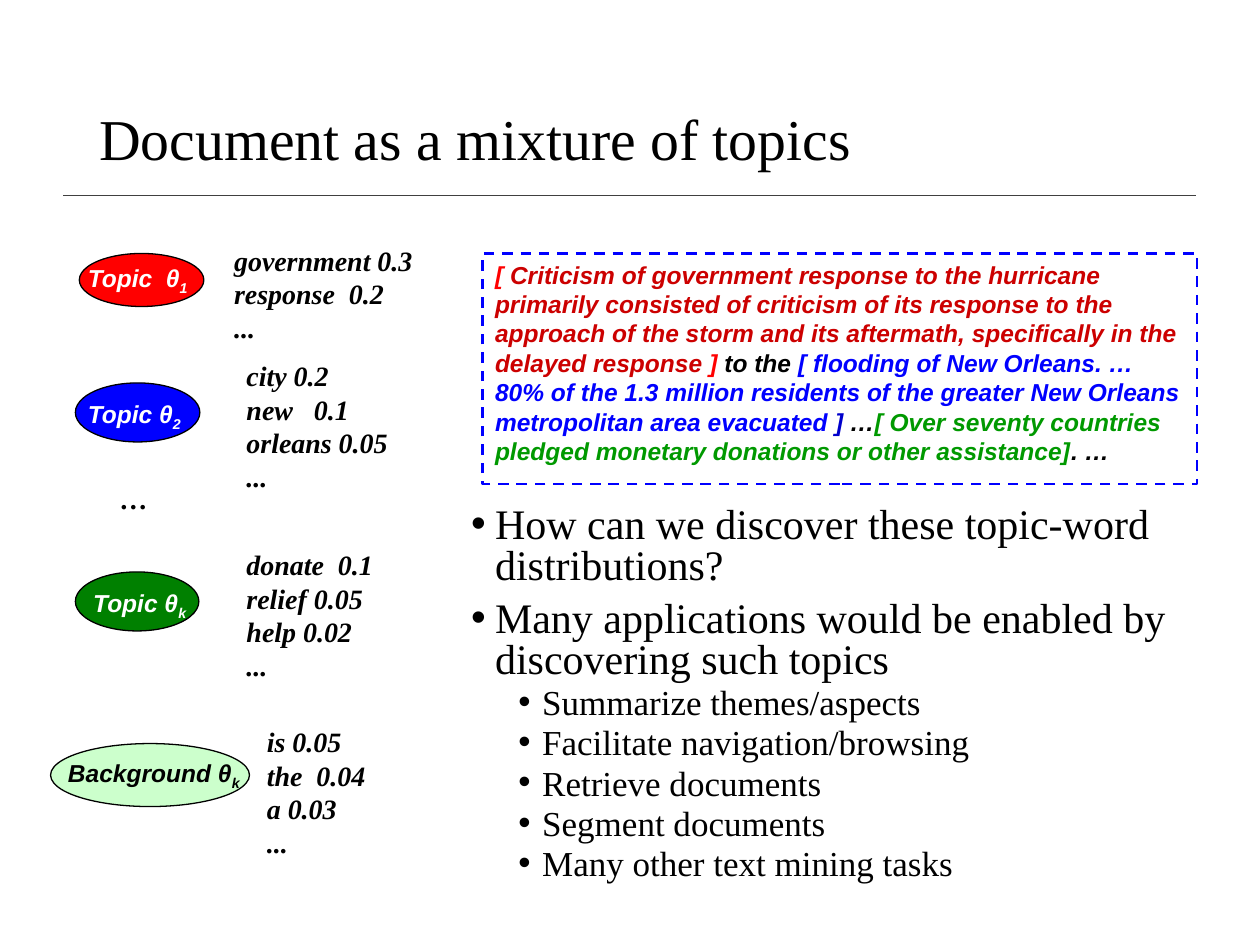
from copy import deepcopy
from dataclasses import dataclass
from typing import NamedTuple

from lxml import etree
from pptx import Presentation
from pptx import util as u
from pptx.dml import color
from pptx.enum import dml, shapes, text
from pptx.oxml import ns

SERIF, SANS = "Times New Roman", "Arial"
BLACK, WHITE, BLUE, RED = "000000", "FFFFFF", "0000FF", "FF0000"


class Box(NamedTuple):
    left: float
    top: float
    width: float
    height: float

    def emu(self) -> list:
        return [u.Cm(length) for length in self]


@dataclass
class Topic:
    name: str
    index: str
    words: str
    fill: str
    oval: Box
    label: Box
    word_list: Box
    ink: str = WHITE


TOPICS = [
    Topic("Topic  θ", "1", "government 0.3\nresponse  0.2\n...", RED,
          Box(1.6, 5.11, 2.51, 1.07), Box(1.52, 5.18, 3.4, 0.84), Box(4.47, 4.78, 4.27, 2.31)),
    Topic("Topic θ", "2", "city 0.2\nnew   0.1\norleans 0.05\n...", BLUE,
          Box(1.52, 7.72, 2.51, 1.19), Box(1.52, 7.92, 3.4, 0.84), Box(4.72, 7.11, 3.78, 3)),
    Topic("Topic θ", "k", "donate  0.1\nrelief 0.05\nhelp 0.02\n...", "008000",
          Box(1.52, 11.53, 2.49, 1.19), Box(1.63, 11.73, 2.97, 0.84), Box(4.72, 10.92, 3.78, 3)),
    Topic("Background θ", "k", "is 0.05\nthe  0.04\na 0.03\n...", "CCFFCC",
          Box(1.02, 14.99, 4.01, 1.27), Box(1.12, 15.16, 4.24, 1.24), Box(5.13, 14.48, 3.4, 3),
          BLACK),
]

PASSAGE = [
    ("[ ", RED),
    ("Criticism of government response to the hurricane primarily consisted of criticism of "
     "its response to the approach of the storm and its aftermath, specifically in the "
     "delayed response", "CC0000"),
    (" ]", RED),
    (" to the ", BLACK),
    ("[ flooding of New Orleans. … 80% of the 1.3 million residents of the greater New Orleans "
     "metropolitan area evacuated ", BLUE),
    ("]", "0000CC"),
    (" …", BLACK),
    ("[ Over seventy countries pledged monetary donations or other assistance]", "009900"),
    (". …", BLACK),
]

QUESTIONS = [
    (0, "How can we discover these topic-word distributions?"),
    (0, "Many applications would be enabled by discovering such topics"),
    (1, "Summarize themes/aspects"),
    (1, "Facilitate navigation/browsing"),
    (1, "Retrieve documents"),
    (1, "Segment documents"),
    (1, "Many other text mining tasks"),
]


def paint(target, hex_code: str) -> None:
    target.rgb = color.RGBColor.from_string(hex_code)


def text_frame(slide, box: Box):
    frame = slide.shapes.add_textbox(*box.emu()).text_frame
    frame.word_wrap = True
    return frame


def write(paragraph, words: str, *, size: float, font: str = SERIF, ink: str = BLACK,
          strong: bool = False, subscript: bool = False) -> None:
    for number, line in enumerate(words.split("\n")):
        if number:
            paragraph.add_line_break()
        run = paragraph.add_run()
        run.text = line
        run.font.size, run.font.name = u.Pt(size), font
        run.font.bold = run.font.italic = strong
        paint(run.font.color, ink)
        properties = run.font._element
        if subscript:
            properties.set("baseline", "-25000")
        if number:
            run._r.getprevious().append(deepcopy(properties))


def add_outline(slide, kind, box: Box, line: str, weight: float, fill: str = ""):
    outline = slide.shapes.add_shape(kind, *box.emu())
    outline.shadow.inherit = False
    if fill:
        outline.fill.solid()
        paint(outline.fill.fore_color, fill)
    else:
        outline.fill.background()
    paint(outline.line.color, line)
    outline.line.width = u.Pt(weight)
    return outline


def add_topic(slide, topic: Topic) -> None:
    add_outline(slide, shapes.MSO_SHAPE.OVAL, topic.oval, BLACK, 0.75, topic.fill)
    label = text_frame(slide, topic.label).paragraphs[0]
    style = dict(size=14, font=SANS, ink=topic.ink, strong=True)
    write(label, topic.name, **style)
    write(label, topic.index, subscript=True, **style)
    write(text_frame(slide, topic.word_list).paragraphs[0], topic.words, size=16, strong=True)


def add_rule(slide) -> None:
    rule = slide.shapes.add_connector(
        shapes.MSO_CONNECTOR.STRAIGHT, u.Cm(1.27), u.Cm(3.94), u.Cm(24.1), u.Cm(3.94))
    paint(rule.line.color, "404040")
    rule.line.width = u.Pt(1)
    etree.SubElement(rule._element.spPr, ns.qn("a:effectLst"))


def add_questions(slide, box: Box) -> None:
    frame = text_frame(slide, box)
    for number, (level, words) in enumerate(QUESTIONS):
        paragraph = frame.add_paragraph() if number else frame.paragraphs[0]
        paragraph.level = level
        paragraph.line_spacing = 0.8
        paragraph.space_before = u.Pt((7.5, 3.8)[level])
        properties = paragraph._p.get_or_add_pPr()
        properties.set("marL", str(u.Cm((0.48, 1.43)[level])))
        properties.set("indent", str(u.Cm(-0.48)))
        etree.SubElement(properties, ns.qn("a:buFont"), typeface=SANS)
        etree.SubElement(properties, ns.qn("a:buChar"), char="•")
        write(paragraph, words, size=(24, 20)[level])


def main() -> None:
    """Build the slide on a document as a mixture of topics."""
    deck = Presentation()
    deck.slide_width, deck.slide_height = u.Cm(25.4), u.Cm(19.05)
    slide = deck.slides.add_slide(deck.slide_layouts[6])
    add_rule(slide)

    title = text_frame(slide, Box(1.75, 1.02, 21.89, 3.68))
    title.vertical_anchor = text.MSO_ANCHOR.MIDDLE
    title.paragraphs[0].line_spacing = 0.9
    write(title.paragraphs[0], "Document as a mixture of topics", size=33)

    add_questions(slide, Box(9.25, 10.11, 14.94, 8.31))
    for topic in TOPICS:
        add_topic(slide, topic)
    more_topics = text_frame(slide, Box(2.18, 9.58, 1.8, 0.94))
    write(more_topics.paragraphs[0], "…", size=16, strong=True)

    passage = text_frame(slide, Box(9.73, 5.11, 14.4, 4.45)).paragraphs[0]
    for words, ink in PASSAGE:
        write(passage, words, size=14, font=SANS, ink=ink, strong=True)
    frame = add_outline(slide, shapes.MSO_SHAPE.RECTANGLE, Box(9.73, 5.11, 14.4, 4.65), BLUE, 1.5)
    frame.line.dash_style = dml.MSO_LINE.DASH

    deck.save("out.pptx")


if __name__ == "__main__":
    main()
